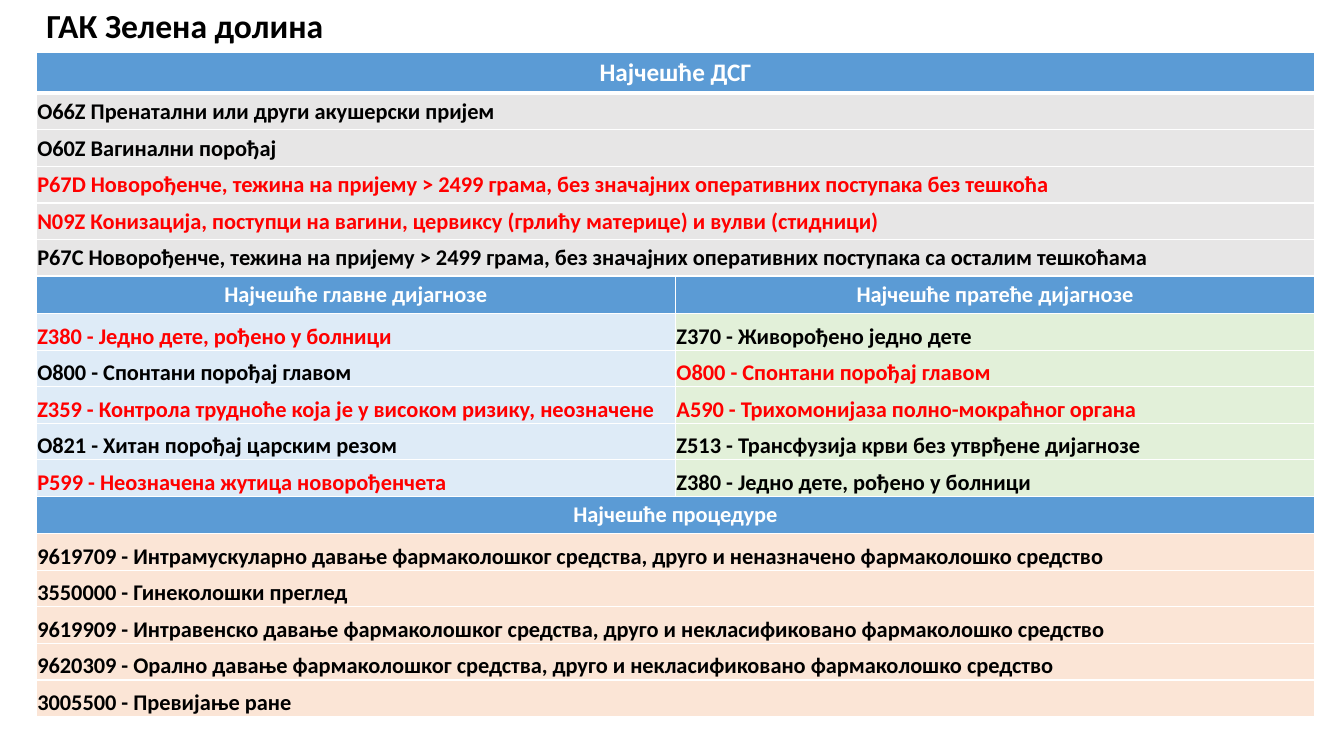
from dataclasses import dataclass

from lxml import etree
from pptx import Presentation
from pptx.dml.color import RGBColor
from pptx.enum.text import MSO_ANCHOR, MSO_AUTO_SIZE, PP_ALIGN
from pptx.oxml.ns import qn
from pptx.util import Inches, Pt

LEFT, CENTER = PP_ALIGN.LEFT, PP_ALIGN.CENTER
TOP, MIDDLE, BOTTOM = MSO_ANCHOR.TOP, MSO_ANCHOR.MIDDLE, MSO_ANCHOR.BOTTOM
NO_FIT = MSO_AUTO_SIZE.NONE
TITLE_ONLY = 5
FONT = "Calibri"
BLACK, WHITE, RED = "000000", "FFFFFF", "FF0000"
BLUE, GRAY, SKY, GREEN, PEACH = "5B9BD5", "E7E6E6", "DEEBF7", "E2F0D9", "FBE5D6"
WIDTH, HEIGHT, ROWS, COLS = 12.68, 6.53, 18, 2


@dataclass
class Item:
    text: str
    color: str = BLACK


@dataclass
class Block:
    """A heading with its items, from one row and column on."""
    row: int
    col: int
    span: int
    head: str
    fill: str
    anchor: MSO_ANCHOR
    items: list[Item]
    size: int = 16


BLOCKS = [
    Block(0, 0, 2, "Најчешће ДСГ", GRAY, MIDDLE, [
        Item("O66Z Пренатални или други акушерски пријем"),
        Item("O60Z Вагинални порођај"),
        Item("P67D Новорођенче, тежина на пријему > 2499 грама, без значајних "
             "оперативних поступака без тешкоћа", RED),
        Item("N09Z Конизација, поступци на вагини, цервиксу (грлићу материце) "
             "и вулви (стидници)", RED),
        Item("P67C Новорођенче, тежина на пријему > 2499 грама, без значајних "
             "оперативних поступака са осталим тешкоћама"),
    ], 18),
    Block(6, 0, 1, "Најчешће главне дијагнозе", SKY, BOTTOM, [
        Item("Z380 - Једно дете, рођено у болници", RED),
        Item("O800 - Спонтани порођај главом"),
        Item("Z359 - Контрола трудноће која је у високом ризику, неозначене", RED),
        Item("O821 - Хитан порођај царским резом"),
        Item("P599 - Неозначена жутица новорођенчета", RED),
    ]),
    Block(6, 1, 1, "Најчешће пратеће дијагнозе", GREEN, BOTTOM, [
        Item("Z370 - Живорођено једно дете"),
        Item("O800 - Спонтани порођај главом", RED),
        Item("A590 - Трихомонијаза полно-мокраћног органа", RED),
        Item("Z513 - Трансфузија крви без утврђене дијагнозе"),
        Item("Z380 - Једно дете, рођено у болници"),
    ]),
    Block(12, 0, 2, "Најчешће процедуре", PEACH, BOTTOM, [
        Item("9619709 - Интрамускуларно давање фармаколошког средства, друго и "
             "неназначено фармаколошко средство"),
        Item("3550000 - Гинеколошки преглед"),
        Item("9619909 - Интравенско давање фармаколошког средства, друго и "
             "некласификовано фармаколошко средство"),
        Item("9620309 - Орално давање фармаколошког средства, друго и "
             "некласификовано фармаколошко средство"),
        Item("3005500 - Превијање ране"),
    ]),
]


def rgb(code: str) -> RGBColor:
    return RGBColor.from_string(code)


def write(para, item: Item, size: int, align: PP_ALIGN) -> None:
    para.alignment = align
    run = para.add_run()
    run.text = item.text
    font = run.font
    font.name, font.size, font.bold = FONT, Pt(size), True
    font.color.rgb = rgb(item.color)


def edge(cell, row: int) -> None:
    """Draw white cell borders, thicker under the first row."""
    props = cell._tc.get_or_add_tcPr()
    for pos, side in enumerate("LRTB"):
        thick = (row, side) in ((0, "B"), (1, "T"))
        line = etree.Element(qn(f"a:ln{side}"), w=str(Pt(3 if thick else 1)))
        fill = etree.SubElement(line, qn("a:solidFill"))
        etree.SubElement(fill, qn("a:srgbClr"), val=WHITE)
        props.insert(pos, line)


def draw(table, block: Block) -> None:
    lines = [Item(block.head, WHITE), *block.items]
    for row, item in enumerate(lines, block.row):
        head = row == block.row
        cells = [table.cell(row, block.col + i) for i in range(block.span)]
        for cell in cells:
            cell.fill.solid()
            cell.fill.fore_color.rgb = rgb(BLUE if head else block.fill)
            edge(cell, row)
        cell = cells[0]
        if block.span > 1:
            cell.merge(cells[-1])
        cell.vertical_anchor = TOP if head else block.anchor
        if not head:
            cell.margin_left = cell.margin_right = cell.margin_top = Inches(0.01)
            cell.margin_bottom = 0
        write(cell.text_frame.paragraphs[0], item,
              block.size if head else 16, CENTER if head else LEFT)


def main() -> None:
    deck = Presentation()
    deck.slide_width, deck.slide_height = Inches(13.33), Inches(7.5)
    slide = deck.slides.add_slide(deck.slide_layouts[TITLE_ONLY])

    title = slide.shapes.title
    title.left, title.top = Inches(0.36), Inches(-0.16)
    title.width, title.height = Inches(11.94), Inches(0.86)
    frame = title.text_frame
    frame.auto_size, frame.vertical_anchor = NO_FIT, MIDDLE
    frame.paragraphs[0].line_spacing = 0.9
    write(frame.paragraphs[0], Item("ГАК Зелена долина"), 24, LEFT)

    table = slide.shapes.add_table(ROWS, COLS, Inches(0.36), Inches(0.52),
                                   Inches(WIDTH), Inches(HEIGHT)).table
    for block in BLOCKS:
        draw(table, block)
    deck.save("out.pptx")


if __name__ == "__main__":
    main()
